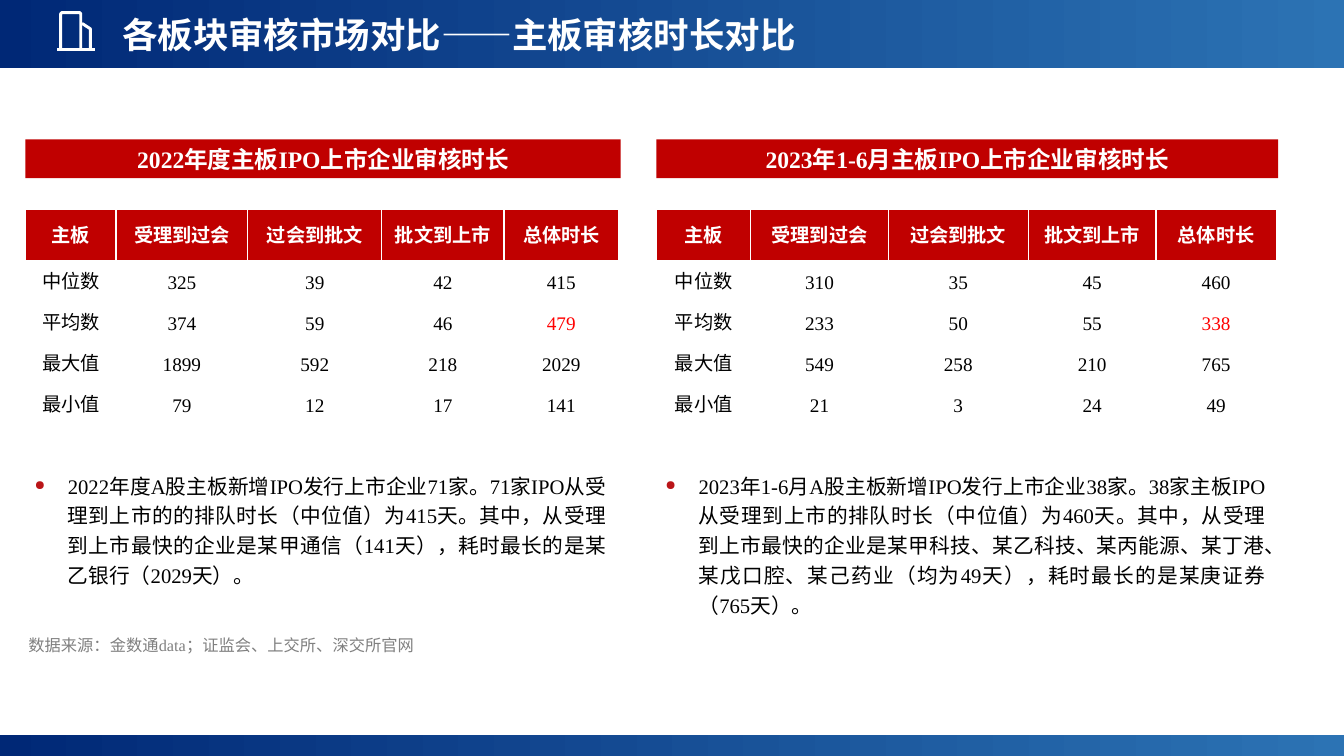
from dataclasses import dataclass
from typing import Any

from lxml.etree import SubElement
from pptx import Presentation
from pptx.dml.color import RGBColor
from pptx.enum.shapes import MSO_CONNECTOR as Connector, MSO_SHAPE as Preset
from pptx.enum.text import MSO_ANCHOR as Anchor, PP_ALIGN as Align
from pptx.oxml.ns import qn
from pptx.util import Cm, Pt

LATIN, CJK = "Times New Roman", "Noto Sans CJK SC"
RED, WHITE, BLACK = "C00000", "FFFFFF", "000000"
HEADINGS = ["主板", "受理到过会", "过会到批文", "批文到上市", "总体时长"]
MEASURES = ["中位数", "平均数", "最大值", "最小值"]
HIGHLIGHT = (2, 4)  # mean of the total duration


@dataclass
class Panel:
    left: float
    banner_width: float
    banner: str
    columns: list[float]
    days: list[list[int]]
    note_width: float
    note_height: float
    note: str


PANELS = [
    Panel(0.61, 14.22, "2022年度主板IPO上市企业审核时长",
          [2.16, 3.15, 3.2, 2.92, 2.74],
          [[325, 39, 42, 415], [374, 59, 46, 479], [1899, 592, 218, 2029], [79, 12, 17, 141]],
          14.15, 3.12,
          "2022年度A股主板新增IPO发行上市企业71家。71家IPO从受理到上市的的排队时长（中位值）为415天。"
          "其中，从受理到上市最快的企业是某甲通信（141天），耗时最长的是某乙银行（2029天）。"),
    Panel(15.68, 15.86 - 1, "2023年1-6月主板IPO上市企业审核时长",
          [2.26, 3.28, 3.35, 3.05, 2.87],
          [[310, 35, 45, 460], [233, 50, 55, 338], [549, 258, 210, 765], [21, 3, 24, 49]],
          14.83, 3.89,
          "2023年1-6月A股主板新增IPO发行上市企业38家。38家主板IPO从受理到上市的排队时长（中位值）为460天。"
          "其中，从受理到上市最快的企业是某甲科技、某乙科技、某丙能源、某丁港、某戊口腔、某己药业（均为49天），"
          "耗时最长的是某庚证券（765天）。"),
]


def rgb(value: str) -> RGBColor:
    return RGBColor.from_string(value)


def apply(target: Any, values: dict[str, Any]) -> None:
    for name, value in values.items():
        setattr(target, name, value)


def write(frame: Any, text: str, size: float, color: str, bold: bool = False,
          align: Any = Align.LEFT, spacing: float = 1.0, latin: str = LATIN) -> Any:
    paragraph = frame.paragraphs[0]
    apply(paragraph, {"alignment": align, "line_spacing": spacing})
    run = paragraph.add_run()
    run.text = text
    apply(run.font, {"size": Pt(size), "bold": bold, "name": latin})
    run.font.color.rgb = rgb(color)
    SubElement(run.font._element, qn("a:ea"), typeface=CJK)
    return paragraph


def text_box(left: float, top: float, width: float, height: float) -> Any:
    frame = slide.shapes.add_textbox(Cm(left), Cm(top), Cm(width), Cm(height)).text_frame
    frame.word_wrap = True
    return frame


def rectangle(left: float, top: float, width: float, height: float) -> Any:
    shape = slide.shapes.add_shape(Preset.RECTANGLE, Cm(left), Cm(top), Cm(width), Cm(height))
    shape.shadow.inherit = False
    shape.line.fill.background()
    return shape


def gradient_bar(top: float, height: float) -> None:
    fill = rectangle(-0.12, top, 32.36, height).fill
    fill.gradient()
    fill.gradient_angle = 180
    for stop, color in zip(fill.gradient_stops, ["2C73B4", "002876"]):
        stop.color.rgb = rgb(color)


def white_line(shape: Any) -> None:
    shape.line.color.rgb = rgb(WHITE)
    shape.line.width = Pt(2)


def outline(points: list[tuple[float, float]]) -> None:
    start, *rest = [(Cm(x), Cm(y)) for x, y in points]
    builder = slide.shapes.build_freeform(*start)
    builder.add_line_segments(rest, close=False)
    shape = builder.convert_to_shape()
    shape.shadow.inherit = False
    shape.fill.background()
    white_line(shape)


def hang(paragraph: Any, indent: float) -> Any:
    properties = paragraph._p.get_or_add_pPr()
    properties.set("marL", str(Cm(indent)))
    properties.set("indent", str(-Cm(indent)))
    return properties


def borders(cell: Any) -> None:
    properties = cell._tc.get_or_add_tcPr()
    for side in ("lnL", "lnR", "lnT", "lnB"):
        line = SubElement(properties, qn(f"a:{side}"), w=str(Pt(1)))
        SubElement(SubElement(line, qn("a:solidFill")), qn("a:srgbClr"), val=WHITE)


def fill_cell(cell: Any, row: int, column: int, text: str) -> None:
    header = row == 0
    if header:
        side, edge, spacing = 0.28, 0.13, 0.9
    elif column == 0:
        side, edge, spacing = 0.03, 0.02, 0.9
    else:
        side, edge, spacing = 0.48, 0.15, 1.2
    apply(cell, {"margin_left": Cm(side), "margin_right": Cm(side), "margin_top": Cm(edge),
                 "margin_bottom": Cm(edge), "vertical_anchor": Anchor.MIDDLE})
    borders(cell)
    if header:
        cell.fill.solid()
        cell.fill.fore_color.rgb = rgb(RED)
    else:
        cell.fill.background()
    color = WHITE if header else "FF0000" if (row, column) == HIGHLIGHT else BLACK
    write(cell.text_frame, text, 13, color, header, Align.CENTER, spacing)


def duration_table(panel: Panel) -> None:
    rows = [HEADINGS] + [[name, *map(str, days)] for name, days in zip(MEASURES, panel.days)]
    table = slide.shapes.add_table(len(rows), len(HEADINGS), Cm(panel.left), Cm(5),
                                   Cm(sum(panel.columns)), Cm(5.14)).table
    apply(table, {"first_row": False, "horz_banding": False})
    for column, width in zip(table.columns, panel.columns):
        column.width = Cm(width)
    for r, texts in enumerate(rows):
        table.rows[r].height = Cm(0.98 if r else 1.22)
        for c, text in enumerate(texts):
            fill_cell(table.cell(r, c), r, c, text)


def draw_panel(panel: Panel) -> None:
    banner = rectangle(panel.left, 3.33, panel.banner_width, 0.93)
    banner.fill.solid()
    banner.fill.fore_color.rgb = rgb(RED)
    banner.text_frame.vertical_anchor = Anchor.MIDDLE
    write(banner.text_frame, panel.banner, 16, WHITE, True, Align.CENTER)

    duration_table(panel)

    frame = text_box(panel.left - 0.03, 11.07, panel.note_width, panel.note_height)
    note = write(frame, panel.note, 14, BLACK, align=Align.JUSTIFY, spacing=1.2)
    properties = hang(note, 0.79)
    SubElement(SubElement(properties, qn("a:buClr")), qn("a:srgbClr"), val="BA1518")
    SubElement(properties, qn("a:buSzPct"), val="65000")
    SubElement(properties, qn("a:buChar"), char="●")


deck = Presentation()
apply(deck, {"slide_width": Cm(32.11), "slide_height": Cm(18.06)})
slide = deck.slides.add_slide(deck.slide_layouts[6])

# Top and bottom bars
gradient_bar(-0.05, 1.68)
gradient_bar(17.57, 0.51)

# Title
title = text_box(2.92, 0.15, 16.51, 1.14)
apply(title, {"margin_left": 0, "margin_right": 0, "margin_top": Cm(0.03), "margin_bottom": Cm(0.03)})
write(title, "各板块审核市场对比——主板审核时长对比", 24, WHITE, True, spacing=1.13, latin=CJK)

# Building icon: tower, wing and ground
outline([(1.45, 1.17), (1.45, 0.33), (1.48, 0.3), (1.9, 0.3), (1.93, 0.33), (1.93, 1.17)])
outline([(1.96, 0.56), (2.16, 0.69), (2.16, 1.19)])
ground = slide.shapes.add_connector(Connector.STRAIGHT, Cm(1.37), Cm(1.19), Cm(2.26), Cm(1.19))
white_line(ground)
SubElement(ground._element.spPr, qn("a:effectLst"))

# Yearly panels
for panel in PANELS:
    draw_panel(panel)

# Data source
source = write(text_box(0.43, 14.81, 12.98, 0.97), "数据来源：金数通data；证监会、上交所、深交所官网",
               11, "808080", align=Align.JUSTIFY, spacing=1.5)
hang(source, 1.12)

deck.save("out.pptx")
